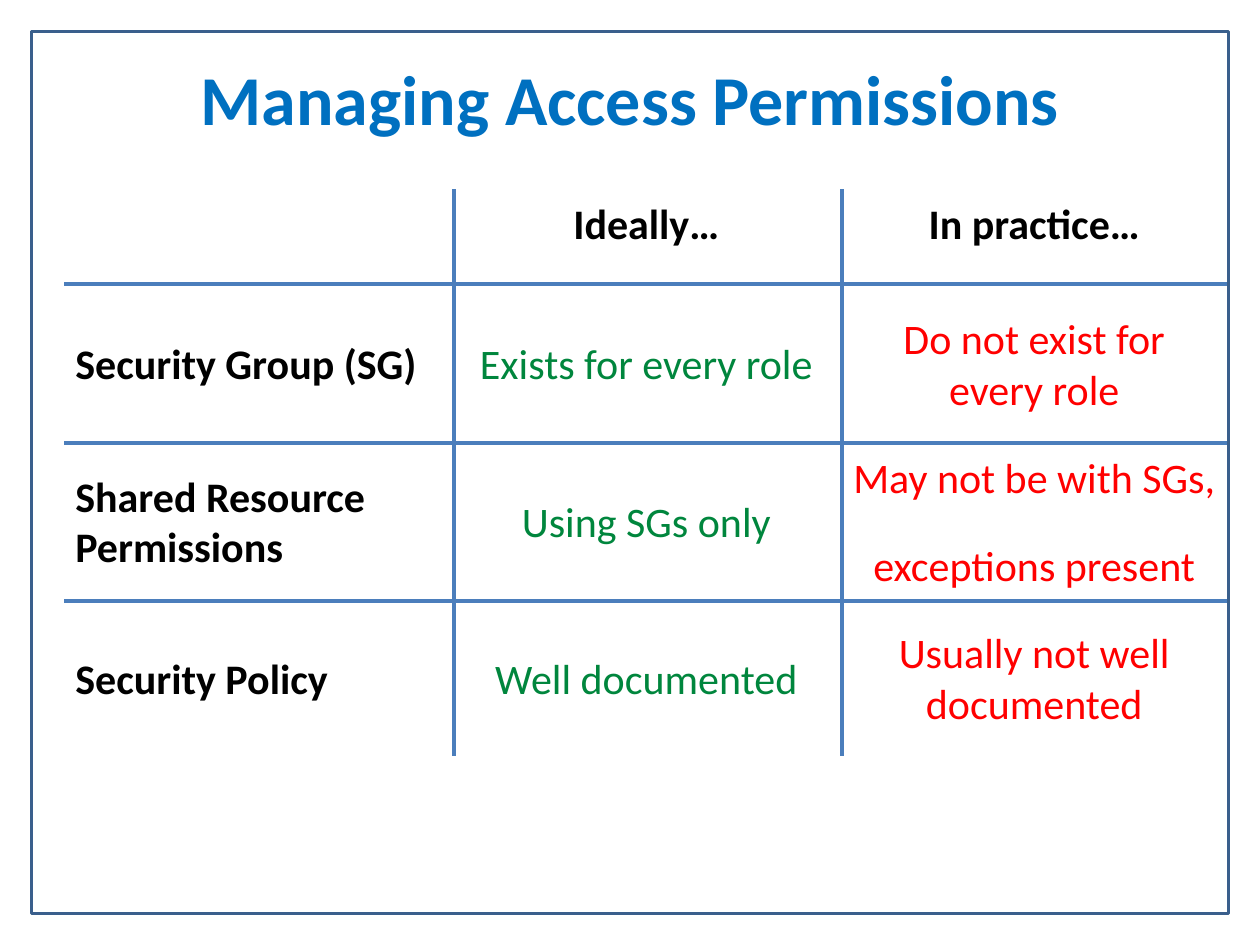
from dataclasses import dataclass
from itertools import pairwise, product

from lxml import etree
from pptx import Presentation
from pptx import util as u
from pptx.dml import color
from pptx.enum import shapes, text
from pptx.oxml import ns

HUES = {
    "frame": "3A5F8C",
    "title": "0070C0",
    "rule": "4B7EBC",
    "label": "000000",
    "ideal": "00863D",
    "real": "FF0000",
}
COLS = [1.27, 9.12, 16.94, 24.76]
ROWS = [3.28, 5.72, 8.92, 12.07, 15.24]
GRID = [
    ["", "Ideally…", "In practice…"],
    ["Security Group (SG)", "Exists for every role", "Do not exist for every role"],
    ["Shared Resource Permissions", "Using SGs only",
     "May not be with SGs, \vexceptions present"],
    ["Security Policy", "Well documented", "Usually not well documented"],
]
INSET = {"margin_left": 0.25, "margin_right": 0.25,
         "margin_top": 0.13, "margin_bottom": 0.13}


@dataclass
class Cell:
    words: str
    left: float
    top: float
    width: float
    height: float
    hue: str
    bold: bool
    head: bool


@dataclass
class Rule:
    x1: float
    y1: float
    x2: float
    y2: float


def tint(hue: str) -> color.RGBColor:
    return color.RGBColor.from_string(HUES[hue])


def apply(item, form: dict) -> None:
    for name, value in form.items():
        setattr(item, name, value)


def write(frame, words: str, hue: str, size: int, bold: bool, head: bool) -> None:
    apply(frame, {"text": words, "word_wrap": True,
                  "auto_size": text.MSO_AUTO_SIZE.NONE,
                  "vertical_anchor": text.MSO_ANCHOR.MIDDLE})
    apply(frame, {name: u.Cm(gap) for name, gap in INSET.items()})
    if head:
        frame.margin_right = 0
    para = frame.paragraphs[0]
    para.alignment = text.PP_ALIGN.LEFT if head else text.PP_ALIGN.CENTER
    for run in para.runs:
        apply(run.font, {"name": "Calibri", "size": u.Pt(size), "bold": bold})
        run.font.color.rgb = tint(hue)


def draw_frame(slide) -> None:
    box = slide.shapes.add_shape(
        shapes.MSO_SHAPE.RECTANGLE, *map(u.Cm, (0.64, 0.64, 24.13, 17.78)))
    box.shadow.inherit = False
    box.fill.background()
    box.line.color.rgb = tint("frame")
    box.line.width = u.Pt(2)


def draw_title(slide) -> None:
    title = slide.shapes.title
    apply(title, {"left": u.Cm(1.27), "top": u.Cm(0.76),
                  "width": u.Cm(22.86), "height": u.Cm(2.41)})
    write(title.text_frame, "Managing Access Permissions", "title", 40, True, False)


def draw_cell(slide, cell: Cell) -> None:
    box = slide.shapes.add_textbox(
        *map(u.Cm, (cell.left, cell.top, cell.width, cell.height)))
    write(box.text_frame, cell.words, cell.hue, 24, cell.bold, cell.head)


def draw_rule(slide, rule: Rule) -> None:
    line = slide.shapes.add_connector(
        shapes.MSO_CONNECTOR.STRAIGHT,
        *map(u.Cm, (rule.x1, rule.y1, rule.x2, rule.y2)))
    line.line.color.rgb = tint("rule")
    line.line.width = u.Pt(2.25)
    etree.SubElement(line._element.spPr, ns.qn("a:effectLst"))


def list_cells() -> list[Cell]:
    cells = []
    for row, col in product(range(len(GRID)), range(3)):
        if GRID[row][col]:
            side = row == 0 or col == 0
            hue = "label" if side else ("ideal", "real")[col - 1]
            cells.append(Cell(GRID[row][col], COLS[col], ROWS[row],
                              COLS[col + 1] - COLS[col], ROWS[row + 1] - ROWS[row],
                              hue, side, col == 0))
    return cells


def list_rules() -> list[Rule]:
    down = [Rule(x, a, x, b) for x, (a, b) in
            product((9.15, 16.97), pairwise((3.81, 8.89, 12.07, 15.24)))]
    over = [Rule(a, y, b, y) for y, (a, b) in
            product((5.72, 8.93, 12.11), pairwise((1.3, 16.94, 24.74)))]
    return down + over


def main() -> None:
    deck = Presentation()
    apply(deck, {"slide_width": u.Cm(25.4), "slide_height": u.Cm(19.05)})
    slide = deck.slides.add_slide(deck.slide_layouts[5])
    draw_frame(slide)
    draw_title(slide)
    for cell in list_cells():
        draw_cell(slide, cell)
    for rule in list_rules():
        draw_rule(slide, rule)
    deck.save("out.pptx")


if __name__ == "__main__":
    main()
